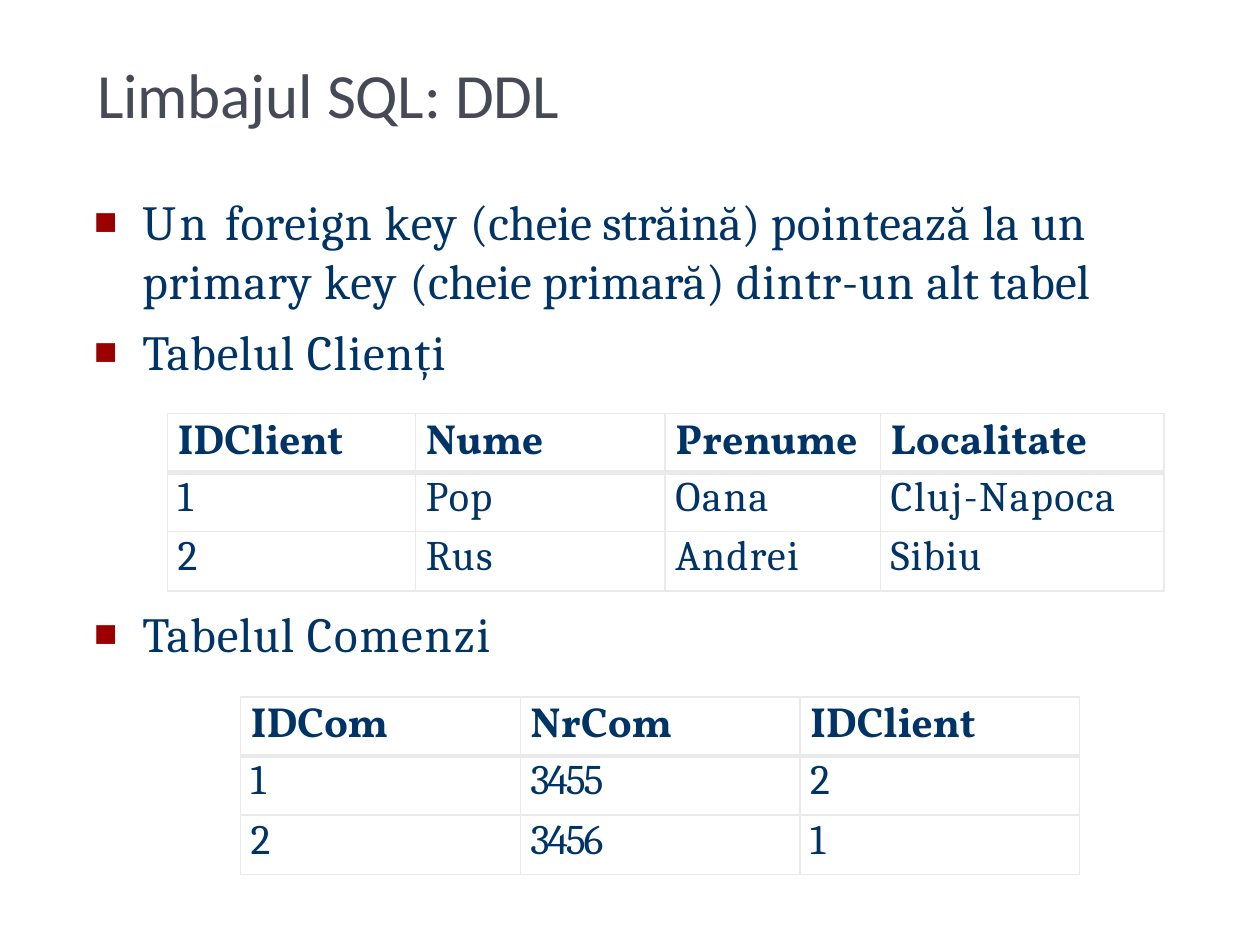
from lxml import etree
from pptx import Presentation
from pptx.dml.color import RGBColor
from pptx.enum.text import MSO_ANCHOR, PP_ALIGN
from pptx.oxml.ns import qn
from pptx.util import Inches, Pt

CENTER, LEFT = PP_ALIGN.CENTER, PP_ALIGN.LEFT
MIDDLE, TOP = MSO_ANCHOR.MIDDLE, MSO_ANCHOR.TOP
COLORS = {"title": "464A56", "text": "003366", "bullet": "9A0000", "border": "EAEAEA", "cell": "FFFFFF"}
MARGIN = 0.75
HANGING = 0.38
ROW_HEIGHT = 0.47
THIN, THICK = 1, 3

KEY_RULE = [
    ("Un ", 2.1), ("foreign ", 0.5), ("key ", 0.7), ("(cheie străină) ", -0.1),
    ("pointează ", 0.4), ("la ", 0.3), ("un ", 0.1), ("primary ", 0.5),
    ("key ", 0.7), ("(cheie ", -0.1), ("primară) ", 0.1), ("dintr-un ", 0.5),
    ("alt tabel", 0.1),
]
CLIENTS_LABEL = [("Tabelul ", 0.5), ("Clienți", 0.8)]
ORDERS_LABEL = [("Tabelul ", 0.5), ("Comenzi", 1.1)]
CLIENTS = [
    [("IDClient", -0.1), ("Nume", 0), ("Prenume", 0), ("Localitate", 0)],
    [("1", 0), ("Pop", 0.8), ("Oana", 1), ("Cluj-Napoca", 0.9)],
    [("2", 0), ("Rus", 0.7), ("Andrei", 0.8), ("Sibiu", 0.5)],
]
ORDERS = [
    [("IDCom", -0.1), ("NrCom", 0), ("IDClient", -0.1)],
    [("1", 0), ("3455", -1.3), ("2", 0)],
    [("2", 0), ("3456", -1.3), ("1", 0)],
]


def rgb(role):
    """Return the colour that plays the given role."""
    return RGBColor.from_string(COLORS[role])


def write_runs(paragraph, pieces, size, font, role="text", bold=False):
    """Add (text, letter spacing) pieces in one common style."""
    for text, spacing in pieces:
        run = paragraph.add_run()
        run.text = text
        run.font.size, run.font.name, run.font.bold = Pt(size), font, bold
        run.font.color.rgb = rgb(role)
        run._r.get_or_add_rPr().set("spc", str(round(spacing * 100)))


def set_insets(frame):
    """Leave only a hairline inset at the top of a text frame."""
    frame.margin_left = frame.margin_right = frame.margin_bottom = 0
    frame.margin_top = Inches(0.01)


def add_square_bullet(paragraph):
    """Give a paragraph a hanging red square."""
    properties = paragraph._p.get_or_add_pPr()
    properties.set("marL", str(Inches(HANGING)))
    properties.set("indent", str(-Inches(HANGING)))
    color = etree.SubElement(properties, qn("a:buClr"))
    etree.SubElement(color, qn("a:srgbClr"), val=COLORS["bullet"])
    etree.SubElement(properties, qn("a:buSzPct"), val="75000")
    etree.SubElement(properties, qn("a:buFont"), typeface="Arial")
    etree.SubElement(properties, qn("a:buChar"), char="◼")


def add_title(slide):
    """Fill and place the title placeholder."""
    title = slide.shapes.title
    title.left, title.top = Inches(MARGIN), Inches(0.42)
    title.width, title.height = Inches(3.71), Inches(0.63)
    frame = title.text_frame
    set_insets(frame)
    frame.word_wrap, frame.vertical_anchor = False, MIDDLE
    heading = frame.paragraphs[0]
    heading.alignment, heading.space_before = CENTER, Pt(1)
    write_runs(heading, [("Limbajul SQL: ", -0.1), ("DDL", 0)], 36, "Calibri", "title")


def add_bullets(slide, top, width, height, items):
    """Add a text box of bulleted items."""
    frame = slide.shapes.add_textbox(Inches(MARGIN), Inches(top), Inches(width), Inches(height)).text_frame
    frame.word_wrap, frame.vertical_anchor = True, TOP
    set_insets(frame)
    for index, pieces in enumerate(items):
        item = frame.add_paragraph() if index else frame.paragraphs[0]
        item.alignment, item.space_before = LEFT, Pt(7.1 if index else 0.9)
        write_runs(item, pieces, 28, "Cambria")
        add_square_bullet(item)


def set_borders(cell, top, bottom):
    """Draw the four cell edges, with the given top and bottom widths."""
    properties = cell._tc.get_or_add_tcPr()
    edges = [("a:lnL", THIN), ("a:lnR", THIN), ("a:lnT", top), ("a:lnB", bottom)]
    for index, (tag, width) in enumerate(edges):
        edge = etree.Element(qn(tag), w=str(Pt(width)))
        fill = etree.SubElement(edge, qn("a:solidFill"))
        etree.SubElement(fill, qn("a:srgbClr"), val=COLORS["border"])
        properties.insert(index, edge)


def add_data_table(slide, left, top, widths, records):
    """Add a table whose first record is a bold header over a thick rule."""
    table = slide.shapes.add_table(
        len(records), len(widths), Inches(left), Inches(top),
        Inches(sum(widths)), Inches(ROW_HEIGHT * len(records))).table
    for column, width in zip(table.columns, widths):
        column.width = Inches(width)
    for row_index, record in enumerate(records):
        table.rows[row_index].height = Inches(ROW_HEIGHT)
        header = row_index == 0
        for column_index, piece in enumerate(record):
            cell = table.cell(row_index, column_index)
            set_insets(cell)
            cell.margin_left = Inches(0.08)
            cell.fill.solid()
            cell.fill.fore_color.rgb = rgb("cell")
            set_borders(cell, THICK if row_index == 1 else THIN, THICK if header else THIN)
            value = cell.text_frame.paragraphs[0]
            value.space_before = Pt(1.1)
            write_runs(value, [piece], 24, "Vollkorn" if header else "Cambria", bold=header)


def main():
    """Build and save the slide."""
    deck = Presentation()
    deck.slide_width, deck.slide_height = Inches(10), Inches(7.5)
    slide = deck.slides.add_slide(deck.slide_layouts[5])
    add_title(slide)
    add_bullets(slide, 1.51, 8.26, 1.53, [KEY_RULE, CLIENTS_LABEL])
    add_bullets(slide, 4.78, 3.34, 0.49, [ORDERS_LABEL])
    add_data_table(slide, 1.33, 3.28, [1.97, 1.98, 1.71, 2.25], CLIENTS)
    add_data_table(slide, 1.91, 5.53, [2.22] * 3, ORDERS)
    deck.save("out.pptx")


if __name__ == "__main__":
    main()
